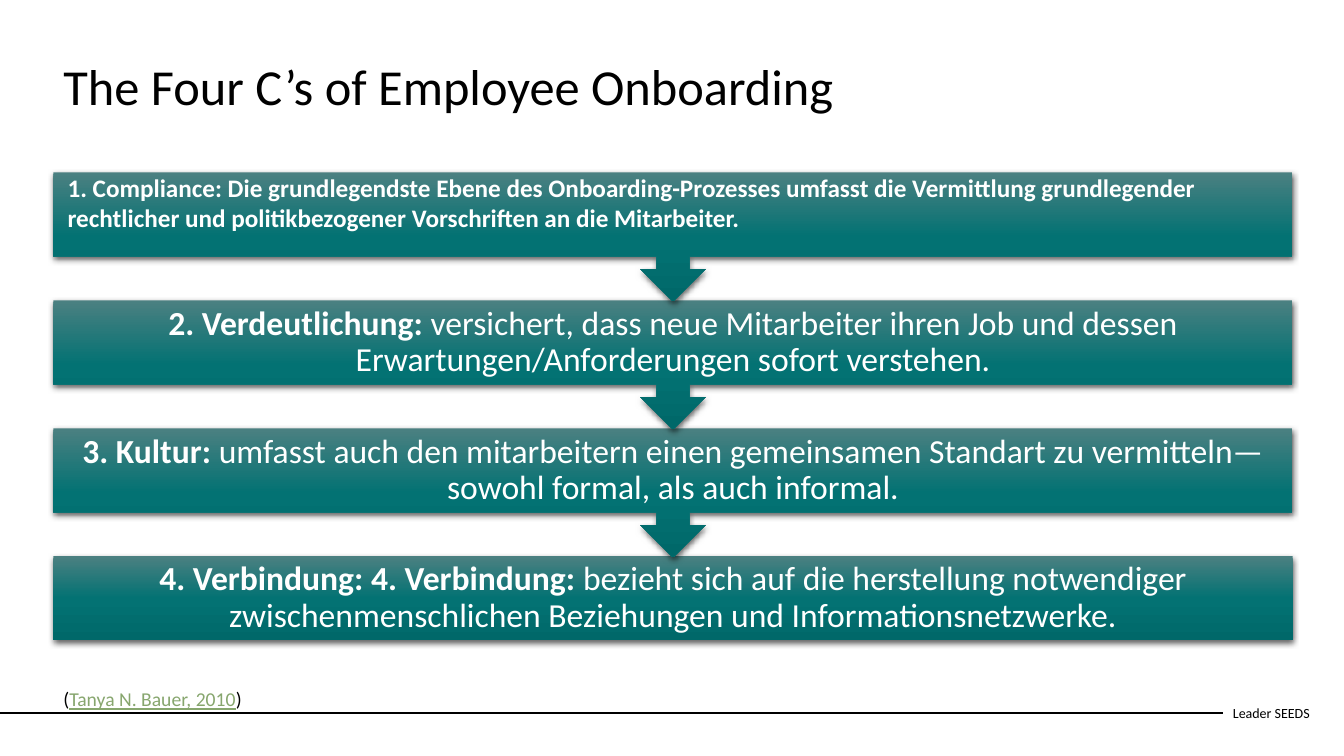
"""Build the slide on the four C's of employee onboarding."""
from copy import deepcopy
from dataclasses import dataclass

from lxml.etree import SubElement
from pptx import Presentation
from pptx.dml.color import RGBColor
from pptx.enum.shapes import MSO_CONNECTOR, MSO_SHAPE
from pptx.enum.text import MSO_ANCHOR, PP_ALIGN
from pptx.oxml.ns import qn
from pptx.util import Emu, Pt

PX = 9144


@dataclass(frozen=True)
class Theme:
    """Colours and type sizes of the slide."""
    font: str = "Calibri"
    ink: str = "000000"
    paper: str = "FFFFFF"
    link: str = "87A66E"
    gradient: tuple = ((0, "4B8081"), (0.5, "037273"), (1, "006869"))
    title: int = 36
    step: int = 24
    first_step: int = 18
    source: int = 14
    footer: int = 10


THEME = Theme()

STEPS = [
    ("1. Compliance: Die grundlegendste Ebene des Onboarding-Prozesses umfasst die Vermittlung "
     "grundlegender rechtlicher und politikbezogener Vorschriften an die Mitarbeiter.", ""),
    ("2. Verdeutlichung: ",
     "versichert, dass neue Mitarbeiter ihren Job und dessen "
     "Erwartungen/Anforderungen sofort verstehen."),
    ("3. Kultur: ",
     "umfasst auch den mitarbeitern einen gemeinsamen Standart zu vermitteln— "
     "sowohl formal, als auch informal."),
    ("4. Verbindung: 4. Verbindung: ",
     "bezieht sich auf die herstellung notwendiger zwischenmenschlichen "
     "Beziehungen und Informationsnetzwerke."),
]


def px(*lengths):
    """Turn whole px into EMU."""
    return [Emu(length * PX) for length in lengths]


def add_run(paragraph, text, size, color, bold=False, underline=False):
    """Add one formatted run to a paragraph."""
    run = paragraph.add_run()
    run.text = text
    run.font.name = THEME.font
    run.font.size = Pt(size)
    run.font.bold = bold
    run.font.underline = underline
    run.font.color.rgb = RGBColor.from_string(color)


def add_label(slide, box, runs, size, anchor=MSO_ANCHOR.TOP, spacing=1.0):
    """Place a wrapped text box holding one paragraph of runs."""
    label = slide.shapes.add_textbox(*px(*box))
    frame = label.text_frame
    frame.word_wrap = True
    frame.vertical_anchor = anchor
    paragraph = frame.paragraphs[0]
    paragraph.line_spacing = spacing
    for text, color, underline in runs:
        add_run(paragraph, text, size, color, underline=underline)
    return label


def style_step(step):
    """Give a step its three-stop gradient and soft shadow."""
    step.line.fill.background()
    step.fill.gradient()
    step.fill.gradient_angle = 270
    stop_list = step._element.spPr.find(qn("a:gradFill")).find(qn("a:gsLst"))
    stop_list.append(deepcopy(stop_list[-1]))
    for stop, (position, color) in zip(step.fill.gradient_stops, THEME.gradient):
        stop.position = position
        stop.color.rgb = RGBColor.from_string(color)
    step.shadow.inherit = False
    effects = step._element.spPr.find(qn("a:effectLst"))
    shadow = SubElement(effects, qn("a:outerShdw"), blurRad=str(Pt(4.5)), dist=str(Pt(1.5)),
                        dir="5400000", algn="ctr", rotWithShape="0")
    shade = SubElement(shadow, qn("a:srgbClr"), val=THEME.ink)
    SubElement(shade, qn("a:alpha"), val="63000")


def add_step(slide, box, preset, heading, detail, is_first):
    """Place one step with its heading and detail."""
    step = slide.shapes.add_shape(preset, *px(*box))
    style_step(step)
    frame = step.text_frame
    frame.word_wrap = True
    frame.margin_left, frame.margin_right = px(14, 14) if is_first else px(19, 19)
    frame.margin_top = frame.margin_bottom = 0
    frame.vertical_anchor = MSO_ANCHOR.TOP if is_first else MSO_ANCHOR.MIDDLE
    paragraph = frame.paragraphs[0]
    paragraph.alignment = PP_ALIGN.LEFT if is_first else PP_ALIGN.CENTER
    paragraph.line_spacing = 1.0 if is_first else 0.9
    size = THEME.first_step if is_first else THEME.step
    add_run(paragraph, heading, size, THEME.paper, bold=True)
    if detail:
        add_run(paragraph, detail, size, THEME.paper)


def add_process(slide, box):
    """Stack the steps from the bottom up, so each arrow overlaps the next step."""
    left, top, width, height = box
    last = len(STEPS) - 1
    last_height = 83
    pitch = (height - last_height) // last
    for index, (heading, detail) in reversed(list(enumerate(STEPS))):
        is_last = index == last
        preset = MSO_SHAPE.RECTANGLE if is_last else MSO_SHAPE.DOWN_ARROW_CALLOUT
        step_height = last_height if is_last else pitch + 1
        step_box = (left, top + index * pitch, width, step_height)
        add_step(slide, step_box, preset, heading, detail, index == 0)


def add_footer(slide, box):
    """Place the footer name at the right, with a rule running up to it."""
    left, top, width, height = box
    name_width = 101
    rule_end, middle = left + width - name_width, top + height // 2
    name = add_label(slide, (rule_end, top, name_width, height),
                     [("Leader SEEDS", THEME.ink, False)], THEME.footer, MSO_ANCHOR.MIDDLE)
    rule = slide.shapes.add_connector(MSO_CONNECTOR.STRAIGHT, *px(left, middle, rule_end, middle))
    rule.end_connect(name, 1)
    rule.line.color.rgb = RGBColor.from_string(THEME.ink)
    rule.line.width = Pt(1.5)
    SubElement(rule._element.spPr, qn("a:effectLst"))


def main():
    """Build and save the slide."""
    deck = Presentation()
    deck.slide_width, deck.slide_height = px(1333, 750)
    slide = deck.slides.add_slide(deck.slide_layouts[6])
    add_footer(slide, (0, 687, 1314, 40))
    add_label(slide, (53, 57, 1159, 88),
              [("The Four C’s of Employee Onboarding", THEME.ink, False)],
              THEME.title, spacing=0.9)
    add_process(slide, (53, 171, 1229, 464))
    add_label(slide, (53, 677, 667, 34),
              [("(", THEME.ink, False), ("Tanya N. Bauer, 2010", THEME.link, True),
               (")", THEME.ink, False)], THEME.source)
    deck.save("out.pptx")


if __name__ == "__main__":
    main()
